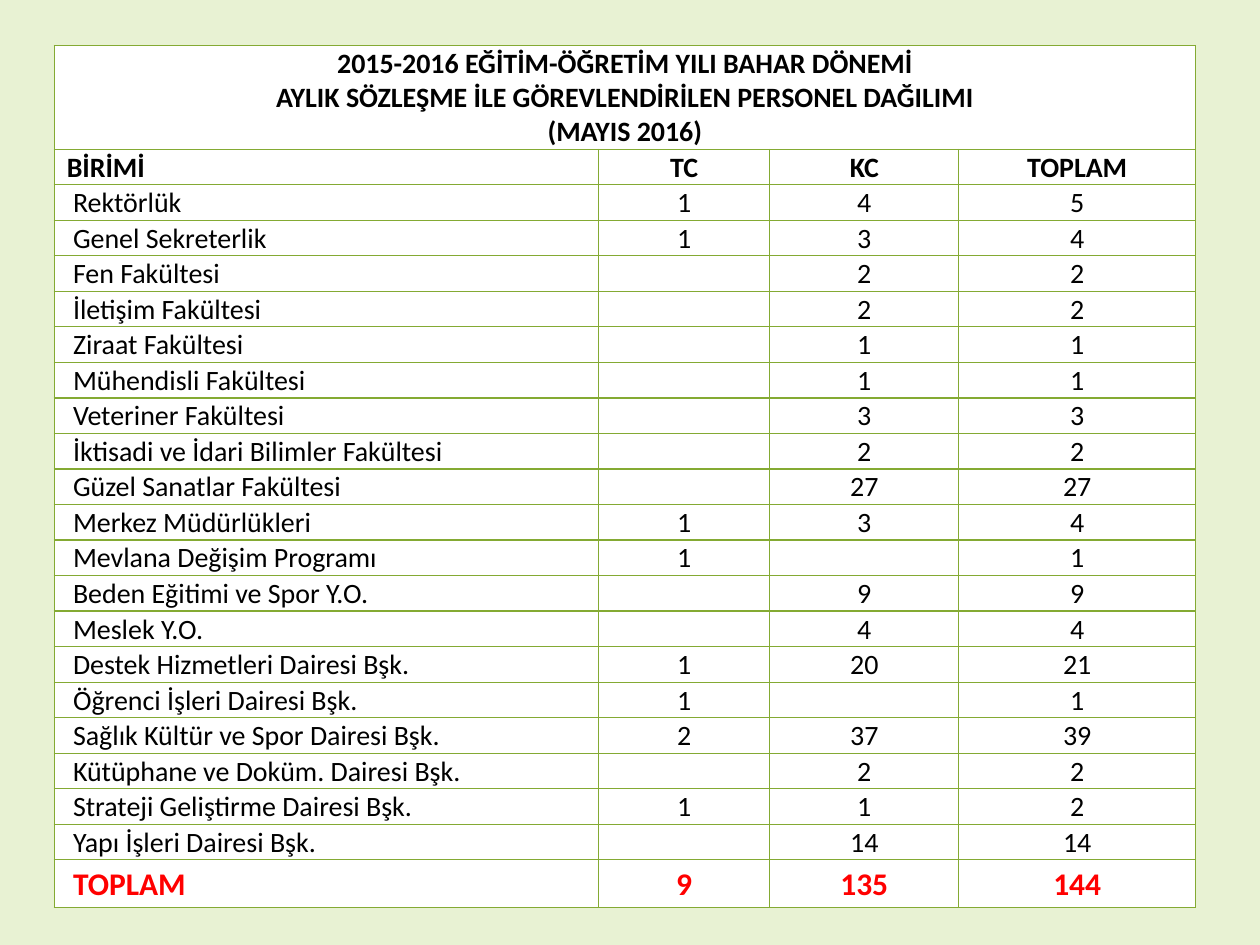
from typing import NamedTuple

import lxml.etree
import pptx
import pptx.dml.color
import pptx.enum.text
import pptx.oxml.ns
import pptx.util

# Slide grid: 1000 columns by 750 rows
WIDE, HIGH = pptx.util.Inches(10), pptx.util.Inches(7.5)
COLS, ROWS = 1000, 750

LEFT, TOP = 43, 36
SPANS = [432, 136, 150, 188]
TITLE_H, ROW_H, SUM_H = 82, 28, 38

FONT = "Calibri"
PALE, WHITE, GREEN, BLACK, RED = "E8F2D3", "FFFFFF", "84AA33", "000000", "FF0000"

TITLE = ("2015-2016 EĞİTİM-ÖĞRETİM YILI BAHAR DÖNEMİ\v"
         "AYLIK SÖZLEŞME İLE GÖREVLENDİRİLEN PERSONEL DAĞILIMI\n"
         "(MAYIS 2016)")
HEADS = ["BİRİMİ", "TC", "KC", "TOPLAM"]


class Unit(NamedTuple):
    name: str
    tc: int
    kc: int


UNITS = [
    Unit("Rektörlük", 1, 4),
    Unit("Genel Sekreterlik", 1, 3),
    Unit("Fen Fakültesi", 0, 2),
    Unit("İletişim Fakültesi", 0, 2),
    Unit("Ziraat Fakültesi", 0, 1),
    Unit("Mühendisli Fakültesi", 0, 1),
    Unit("Veteriner Fakültesi", 0, 3),
    Unit("İktisadi ve İdari Bilimler Fakültesi", 0, 2),
    Unit("Güzel Sanatlar Fakültesi", 0, 27),
    Unit("Merkez Müdürlükleri", 1, 3),
    Unit("Mevlana Değişim Programı", 1, 0),
    Unit("Beden Eğitimi ve Spor Y.O.", 0, 9),
    Unit("Meslek Y.O.", 0, 4),
    Unit("Destek Hizmetleri Dairesi Bşk.", 1, 20),
    Unit("Öğrenci İşleri Dairesi Bşk.", 1, 0),
    Unit("Sağlık Kültür ve Spor Dairesi Bşk.", 2, 37),
    Unit("Kütüphane ve Doküm. Dairesi Bşk.", 0, 2),
    Unit("Strateji Geliştirme Dairesi Bşk.", 1, 1),
    Unit("Yapı İşleri Dairesi Bşk.", 0, 14),
]


def across(cols: float) -> int:
    return int(WIDE * cols / COLS)


def down(rows: float) -> int:
    return int(HIGH * rows / ROWS)


def paint(fill, tone: str) -> None:
    fill.solid()
    fill.fore_color.rgb = pptx.dml.color.RGBColor.from_string(tone)


def write(cell, text: str, size: int = 16, tone: str = BLACK,
          bold: bool = False, center: bool = True) -> None:
    align = pptx.enum.text.PP_ALIGN
    lines = text.split("\n")
    frame = cell.text_frame
    for i, line in enumerate(lines):
        para = frame.add_paragraph() if i else frame.paragraphs[0]
        para.text = line
        para.alignment = align.CENTER if center else align.LEFT
        for run in para.runs:
            run.font.name, run.font.bold = FONT, bold
            run.font.size = pptx.util.Pt(size)
            paint(run.font.fill, tone)
        if not line:  # an empty cell still needs a text size to keep its row low
            lxml.etree.SubElement(para._p, pptx.oxml.ns.qn("a:endParaRPr"),
                                  sz=str(size * 100))


def dress(cell, inset: float = 10) -> None:
    """Set insets, thin green borders and a white fill."""
    cell.margin_left, cell.margin_right = across(inset), across(10)
    cell.margin_top, cell.margin_bottom = down(1), 0
    cell.vertical_anchor = pptx.enum.text.MSO_ANCHOR.MIDDLE
    qn = pptx.oxml.ns.qn
    props = cell._tc.get_or_add_tcPr()
    for side in ("lnL", "lnR", "lnT", "lnB"):
        line = lxml.etree.SubElement(props, qn("a:" + side),
                                     w=str(int(pptx.util.Pt(0.75))))
        fill = lxml.etree.SubElement(line, qn("a:solidFill"))
        lxml.etree.SubElement(fill, qn("a:srgbClr"), val=GREEN)
    paint(cell.fill, WHITE)


def fill_row(table, row: int, texts: list, inset: float = 15, **form) -> None:
    for col, text in enumerate(texts):
        cell = table.cell(row, col)
        dress(cell, inset if col == 0 else 10)
        write(cell, text, center=col > 0, **form)


def counts(tc: int, kc: int) -> list:
    return [str(n) if n else "" for n in (tc, kc, tc + kc)]


def main() -> None:
    deck = pptx.Presentation()
    deck.slide_width, deck.slide_height = WIDE, HIGH
    slide = deck.slides.add_slide(deck.slide_layouts[6])
    paint(slide.background.fill, PALE)

    # Table grid
    highs = [TITLE_H] + [ROW_H] * (len(UNITS) + 1) + [SUM_H]
    table = slide.shapes.add_table(
        len(highs), len(SPANS), across(LEFT), down(TOP),
        across(sum(SPANS)), down(sum(highs))).table
    table.first_row = table.horz_banding = False
    for col, span in zip(table.columns, SPANS):
        col.width = across(span)
    for row, high in zip(table.rows, highs):
        row.height = down(high)

    # Title over all columns
    for col in range(len(SPANS)):
        dress(table.cell(0, col))
    table.cell(0, 0).merge(table.cell(0, len(SPANS) - 1))
    write(table.cell(0, 0), TITLE, bold=True)

    # Heads, units and grand total
    fill_row(table, 1, HEADS, inset=10, bold=True)
    for row, unit in enumerate(UNITS, 2):
        fill_row(table, row, [unit.name] + counts(unit.tc, unit.kc))
    sums = counts(sum(u.tc for u in UNITS), sum(u.kc for u in UNITS))
    fill_row(table, len(highs) - 1, ["TOPLAM"] + sums,
             size=18, tone=RED, bold=True)

    deck.save("out.pptx")


if __name__ == "__main__":
    main()
